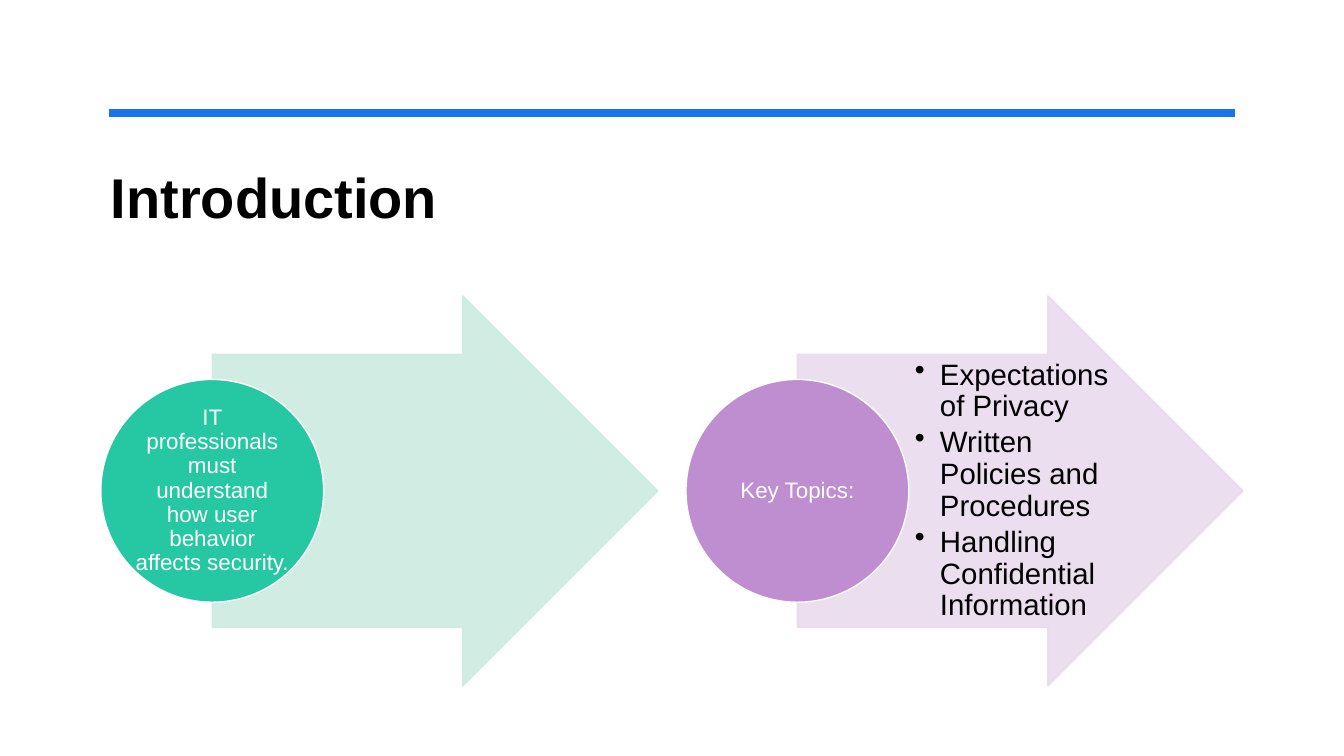
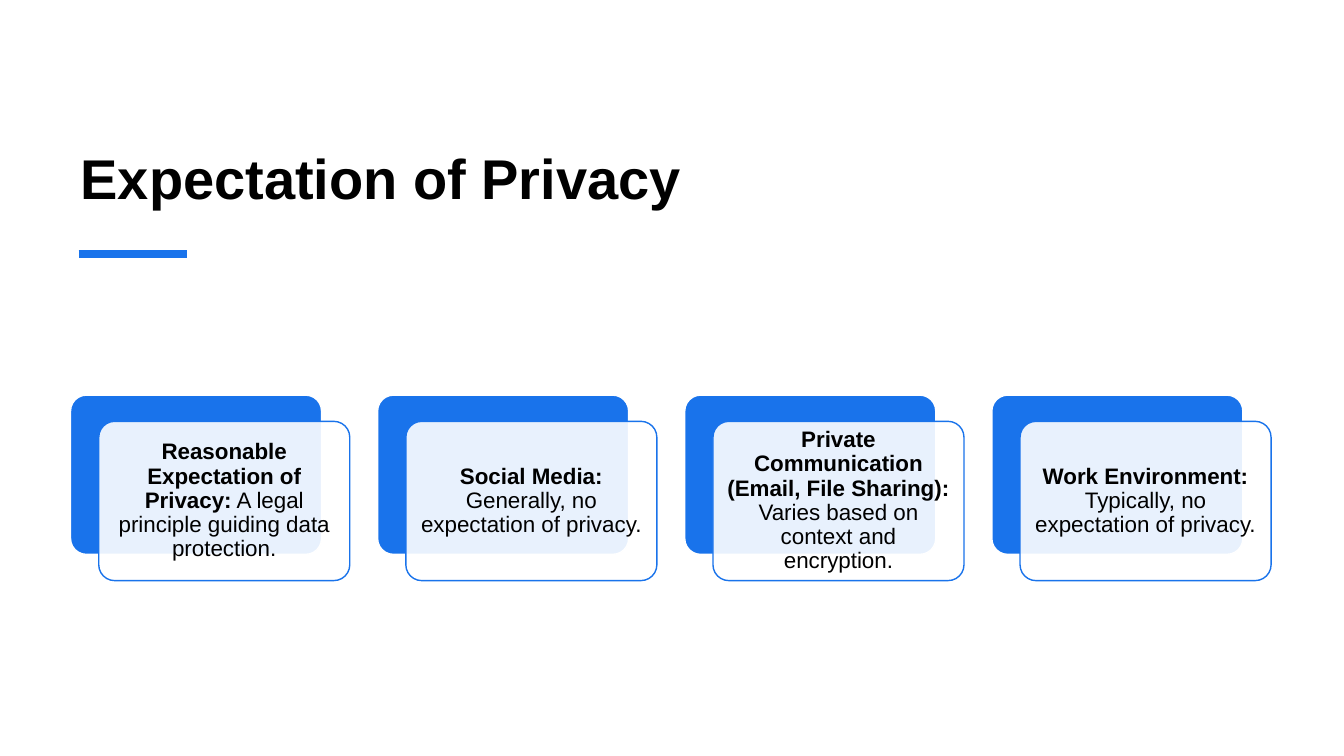
from dataclasses import dataclass

from lxml.etree import SubElement
from pptx import Presentation
from pptx.dml.color import RGBColor as RGB
from pptx.enum.shapes import MSO_CONNECTOR as LINK, MSO_SHAPE as KIND
from pptx.enum.text import MSO_ANCHOR as ANCHOR, MSO_AUTO_SIZE as FIT, PP_ALIGN as ALIGN
from pptx.oxml.ns import qn
from pptx.util import Inches, Pt


@dataclass(frozen=True)
class Theme:
    font: str = "Arial"
    blue: str = "1973EB"
    white: str = "FFFFFF"
    black: str = "000000"
    green: str = "25C8A2"
    mint: str = "CDEBE0"
    purple: str = "BF8ED1"
    lilac: str = "E8DBEE"
    head: int = 40
    list: int = 21
    body: int = 16
    rule: int = 6
    edge: int = 1
    clear: int = 90


look = Theme()
deck = Presentation()
deck.slide_width, deck.slide_height = Inches(13.333), Inches(7.5)


def place(item, left, top, wide, high):
    """Set an item's box, given in percent of the slide's size."""
    item.left, item.width = (int(deck.slide_width * n / 100) for n in (left, wide))
    item.top, item.height = (int(deck.slide_height * n / 100) for n in (top, high))


def draw(slide, kind, box, fill, line, alpha=100, runs=(), ink=look.black, inset=0.01):
    """Add a shape with centred text; alpha applies wherever the fill colour is used."""
    shape = slide.shapes.add_shape(kind, 0, 0, 0, 0)
    place(shape, *box)
    shape.shadow.inherit = False
    shape.fill.solid()
    shape.fill.fore_color.rgb = RGB.from_string(fill)
    shape.line.color.rgb = RGB.from_string(line)
    shape.line.width = Pt(look.edge)
    if alpha < 100:
        for tint in shape.element.xpath("p:spPr//a:srgbClr"):
            if tint.get("val") == fill:
                SubElement(tint, qn("a:alpha")).set("val", str(alpha * 1000))
    frame = shape.text_frame
    frame.word_wrap = True
    frame.vertical_anchor = ANCHOR.MIDDLE
    frame.margin_left = frame.margin_right = Inches(inset)
    frame.margin_top = frame.margin_bottom = Inches(inset)
    para = frame.paragraphs[0]
    para.alignment, para.line_spacing = ALIGN.CENTER, 0.9
    for words, bold in runs:
        run = para.add_run()
        run.text = words
        run.font.name, run.font.size, run.font.bold = look.font, Pt(look.body), bold
        run.font.color.rgb = RGB.from_string(ink)
    return shape


# Title and blue rule on each slide
heads = [
    ("Introduction", (7.5, 20, 85, 16.67), ANCHOR.TOP, (8.1, 14.93, 83.78, 0)),
    ("Expectation of Privacy", (5.25, 8.27, 89.33, 20.27), ANCHOR.BOTTOM, (5.85, 33.6, 8.03, 0)),
]
for words, box, anchor, span in heads:
    slide = deck.slides.add_slide(deck.slide_layouts[5])
    title = slide.shapes.title
    place(title, *box)
    frame = title.text_frame
    frame.auto_size, frame.vertical_anchor = FIT.NONE, anchor
    para = frame.paragraphs[0]
    para.alignment, para.line_spacing = ALIGN.LEFT, 1.1
    run = para.add_run()
    run.text = words
    run.font.name, run.font.size, run.font.bold = look.font, Pt(look.head), True
    run.font.color.rgb = RGB.from_string(look.black)

    rule = slide.shapes.add_connector(LINK.STRAIGHT, 0, 0, 0, 0)
    place(rule, *span)
    rule.line.color.rgb = RGB.from_string(look.blue)
    rule.line.width = Pt(look.rule)
    SubElement(rule.element.spPr, qn("a:effectLst"))

intro, privacy = deck.slides

# Introduction: two arrows, each starting at the centre of its circle
steps = [
    ("IT professionals must understand how user behavior affects security.",
     look.green, look.mint, []),
    ("Key Topics:", look.purple, look.lilac,
     ["Expectations of Privacy", "Written Policies and Procedures",
      "Handling Confidential Information"]),
]
mid, wide, high, shaft = 64.93, 33.15, 51.6, 0.7
disc, tall = 16.58, 29.47
for col, (words, dark, pale, topics) in enumerate(steps):
    left = 7.5 + col * 43.54
    arrow = draw(intro, KIND.RIGHT_ARROW, (left + disc / 2, mid - high / 2, wide, high),
                 pale, pale, look.clear)
    arrow.adjustments[0], arrow.adjustments[1] = shaft, 0.5

    # Bullets fill the shaft to the right of the circle
    if topics:
        note = intro.shapes.add_textbox(0, 0, 0, 0)
        place(note, left + disc, mid - high * shaft / 2, 16.2, high * shaft)
        frame = note.text_frame
        frame.word_wrap, frame.vertical_anchor = True, ANCHOR.MIDDLE
        frame.margin_left, frame.margin_right = Inches(0.06), Inches(0.03)
        frame.margin_top = frame.margin_bottom = Inches(0.01)
        for row, topic in enumerate(topics):
            para = frame.add_paragraph() if row else frame.paragraphs[0]
            para.line_spacing, para.space_after = 0.9, Pt(3)
            props = para._p.get_or_add_pPr()
            props.set("marL", str(Inches(0.25)))
            props.set("indent", str(-Inches(0.25)))
            SubElement(props, qn("a:buChar")).set("char", "•")
            run = para.add_run()
            run.text = topic
            run.font.name, run.font.size = look.font, Pt(look.list)
            run.font.color.rgb = RGB.from_string(look.black)

    draw(intro, KIND.OVAL, (left, mid - tall / 2, disc, tall), dark, look.white,
         runs=[(words, False)], ink=look.white)

# Expectation of Privacy: four cards, each over a blue back plate
cards = [
    ("Reasonable Expectation of Privacy:", " A legal principle guiding data protection."),
    ("Social Media:", " Generally, no expectation of privacy."),
    ("Private Communication (Email, File Sharing):",
     " Varies based on context and encryption."),
    ("Work Environment:", " Typically, no expectation of privacy."),
]
wide, high = 18.68, 21.07
for col, (name, text) in enumerate(cards):
    left, top = 5.25 + col * 22.85, 52.27
    back = draw(privacy, KIND.ROUNDED_RECTANGLE, (left, top, wide, high),
                look.blue, look.white)
    card = draw(privacy, KIND.ROUNDED_RECTANGLE, (left + 2.1, top + 3.47, wide, high),
                look.white, look.blue, look.clear,
                runs=[(name, True), (text, False)], inset=0.07)
    back.adjustments[0] = card.adjustments[0] = 0.1

deck.save("out.pptx")
